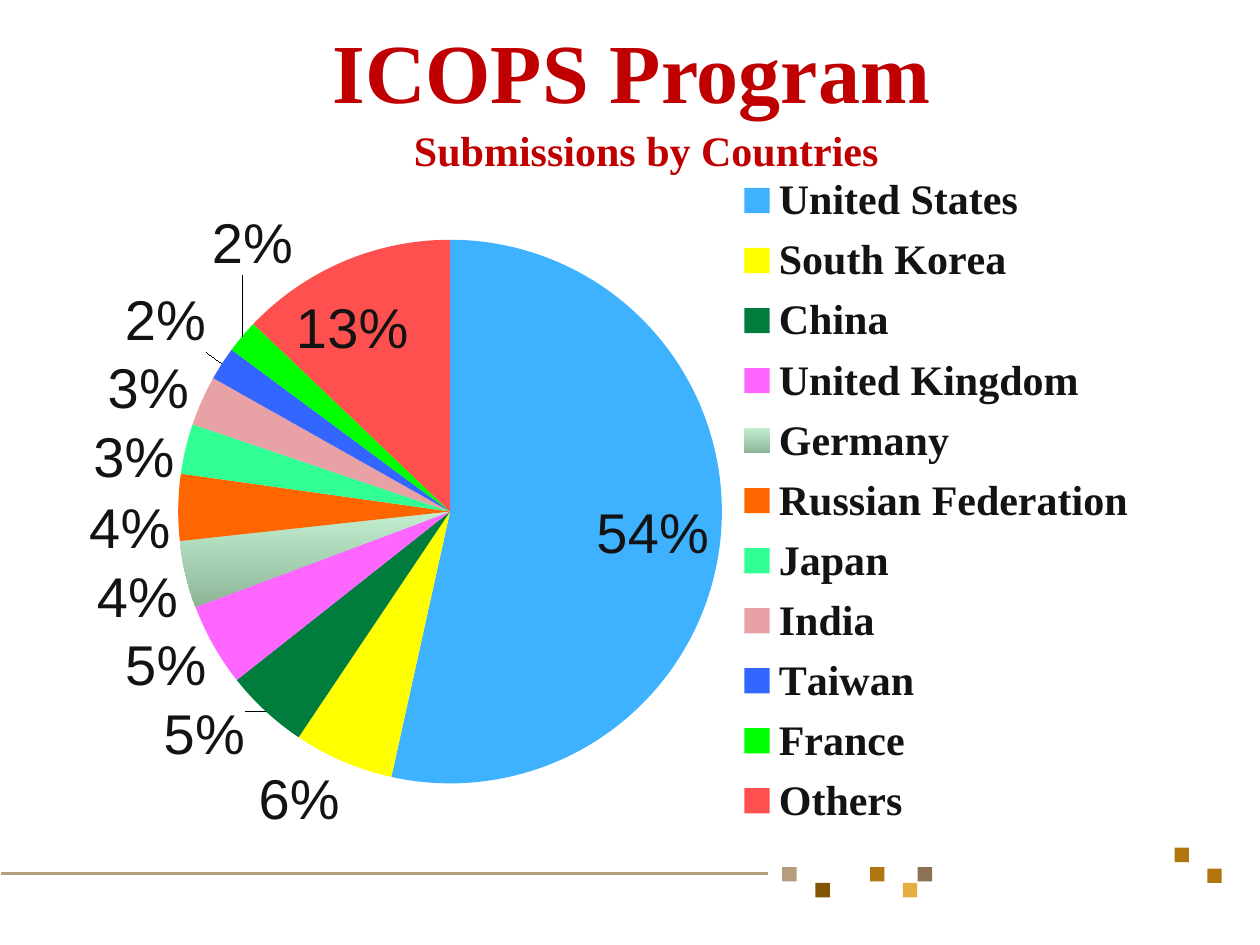
from dataclasses import dataclass

from lxml.etree import SubElement
from pptx import Presentation
from pptx.chart.data import CategoryChartData
from pptx.dml.color import RGBColor
from pptx.enum.chart import XL_CHART_TYPE as ChartType
from pptx.enum.chart import XL_LABEL_POSITION as LabelPos
from pptx.enum.chart import XL_LEGEND_POSITION as LegendPos
from pptx.enum.shapes import MSO_CONNECTOR as Connector
from pptx.enum.shapes import MSO_SHAPE as Shape
from pptx.enum.text import PP_ALIGN as Align
from pptx.oxml import parse_xml
from pptx.oxml.ns import nsdecls, qn
from pptx.util import Cm, Pt


@dataclass(frozen=True)
class Theme:
    """Colours, fonts and type sizes of the slide."""
    heading: str = "C00000"
    ink: str = "131313"
    rule: str = "B59E7B"
    gold: str = "B0760D"
    amber: str = "E6AE41"
    brown: str = "825504"
    taupe: str = "8A7252"
    serif: str = "Times New Roman"
    sans: str = "Arial"
    title_size: int = 48
    chart_size: int = 18
    legend_size: int = 24
    label_size: int = 32


THEME = Theme()
PERCENT = '0"%"'
GERMANY_SHADES = ("C2EED0", "8FB597")

SUBMISSIONS = [
    ("United States", 54, "3EB2FF"),
    ("South Korea", 6, "FFFF00"),
    ("China", 5, "007D3C"),
    ("United Kingdom", 5, "FF66FF"),
    ("Germany", 4, GERMANY_SHADES),
    ("Russian Federation", 4, "FF6600"),
    ("Japan", 3, "31FF94"),
    ("India", 3, "E8A1A4"),
    ("Taiwan", 2, "3366FF"),
    ("France", 2, "00FF00"),
    ("Others", 13, "FF5050"),
]
INSIDE_LABELS = {"United States", "Others"}
LABEL_SHIFTS = {
    "United States": (-0.3, 3.2),
    "China": (-1.3, -1.7),
    "United Kingdom": (0, -1.8),
    "Germany": (0, -1.2),
    "Russian Federation": (0, 2.8),
    "Japan": (-0.3, 5.4),
    "India": (-0.5, 2.9),
    "Taiwan": (-0.8, -0.9),
    "France": (4.9, -7.3),
    "Others": (-4.3, 3.7),
}
ORNAMENTS = [
    (24.34, 17.51, THEME.gold),
    (23.68, 17.09, THEME.gold),
    (17.54, 17.48, THEME.gold),
    (15.77, 17.48, THEME.rule),
    (18.2, 17.8, THEME.amber),
    (16.44, 17.8, THEME.brown),
    (18.5, 17.48, THEME.taupe),
]


def style_font(font, size, color, name, bold=False):
    """Apply a complete character format."""
    font.size, font.name, font.bold = Pt(size), name, bold
    font.color.rgb = RGBColor.from_string(color)


def write_text(frame, text, *, size, color, name, bold=False, align=Align.CENTER):
    """Write one formatted paragraph and return it."""
    paragraph = frame.paragraphs[0]
    paragraph.alignment = align
    run = paragraph.add_run()
    run.text = text
    style_font(run.font, size, color, name, bold)
    return paragraph


def place(element, index, modes=(), **percents):
    """Give a chart part a manual layout in percents of the chart."""
    for old in element.findall(qn("c:layout")):
        element.remove(old)
    layout = parse_xml(f"<c:layout {nsdecls('c')}><c:manualLayout/></c:layout>")
    for tag, value in modes:
        SubElement(layout[0], qn(f"c:{tag}")).set("val", value)
    for tag, value in percents.items():
        SubElement(layout[0], qn(f"c:{tag}")).set("val", f"{value / 100:.3f}")
    element.insert(index, layout)


def add_rule(slide):
    """Draw the footer line."""
    rule = slide.shapes.add_connector(
        Connector.STRAIGHT, Cm(0.03), Cm(17.61), Cm(15.49), Cm(17.61))
    rule.line.color.rgb = RGBColor.from_string(THEME.rule)
    rule.line.width = Pt(2)
    SubElement(rule._element.spPr, qn("a:effectLst"))


def add_ornament(slide, left, top, color):
    """Draw one small footer square."""
    square = slide.shapes.add_shape(
        Shape.RECTANGLE, Cm(left), Cm(top), Cm(0.29), Cm(0.29))
    square.shadow.inherit = False
    square.fill.solid()
    square.fill.fore_color.rgb = RGBColor.from_string(color)
    square.line.fill.background()


def add_title(slide):
    """Add the slide title."""
    frame = slide.shapes.add_textbox(
        Cm(0.98), Cm(-0.03), Cm(23.5), Cm(2.44)).text_frame
    frame.word_wrap = True
    heading = write_text(frame, "ICOPS Program", size=THEME.title_size,
                         color=THEME.heading, name=THEME.serif, bold=True)
    heading.line_spacing = 1.15
    heading.space_after = Pt(10)


def paint_slice(fill, color):
    """Fill a slice with one colour or a downward gradient."""
    if isinstance(color, str):
        fill.solid()
        fill.fore_color.rgb = RGBColor.from_string(color)
        return
    fill.gradient()
    fill.gradient_angle = 270
    for stop, shade in zip(fill.gradient_stops, color):
        stop.color.rgb = RGBColor.from_string(shade)


def label_slices(series):
    """Put a percentage on every slice, shifting the crowded ones."""
    for index, (country, _, color) in enumerate(SUBMISSIONS):
        point = series.points[index]
        paint_slice(point.format.fill, color)
        label = point.data_label
        style_font(label.font, THEME.label_size, THEME.ink, THEME.sans)
        label.position = (LabelPos.INSIDE_END if country in INSIDE_LABELS
                          else LabelPos.OUTSIDE_END)
    labels = series.data_labels
    labels.show_value = True
    labels.number_format, labels.number_format_is_linked = PERCENT, False
    style_font(labels.font, THEME.label_size, THEME.ink, THEME.sans)
    for (country, _, _), label in zip(SUBMISSIONS, series._element.xpath(".//c:dLbl")):
        label.insert(1, parse_xml(
            f"<c:numFmt {nsdecls('c')} formatCode='{PERCENT}' sourceLinked='0'/>"))
        if country in LABEL_SHIFTS:
            across, down = LABEL_SHIFTS[country]
            place(label, 1, x=across, y=down)


def add_submissions_chart(slide):
    """Add the pie of submissions with its title and legend."""
    data = CategoryChartData(number_format=PERCENT)
    data.categories = [country for country, _, _ in SUBMISSIONS]
    data.add_series("Series 1", [share for _, share, _ in SUBMISSIONS])
    chart = slide.shapes.add_chart(
        ChartType.PIE, Cm(1.27), Cm(1.9), Cm(23.47), Cm(15.67), data).chart
    style_font(chart.font, THEME.chart_size, THEME.ink, THEME.sans)
    edges = [("xMode", "edge"), ("yMode", "edge")]

    chart.has_title = True
    write_text(chart.chart_title.text_frame, "Submissions by Countries",
               size=THEME.legend_size, color=THEME.heading,
               name=THEME.serif, bold=True)
    place(chart.chart_title._element, 1, edges, x=29.5, y=2.8)

    chart.has_legend = True
    legend = chart.legend
    legend.position, legend.include_in_layout = LegendPos.RIGHT, False
    style_font(legend.font, THEME.legend_size, THEME.ink, THEME.serif, True)
    place(legend._element, 1, edges, x=54.5, y=9, w=41, h=86.6)

    pie = chart.plots[0]
    pie.vary_by_categories = True
    label_slices(pie.series[0])
    place(chart._chartSpace.chart.plotArea, 0, [("layoutTarget", "inner"), *edges],
          x=9.9, y=13.5, w=46.7, h=80.4)


def main():
    """Build and save the slide."""
    deck = Presentation()
    deck.slide_width, deck.slide_height = Cm(25.4), Cm(19.05)
    slide = deck.slides.add_slide(deck.slide_layouts[6])
    add_rule(slide)
    for ornament in ORNAMENTS:
        add_ornament(slide, *ornament)
    add_title(slide)
    add_submissions_chart(slide)
    deck.save("out.pptx")


if __name__ == "__main__":
    main()
